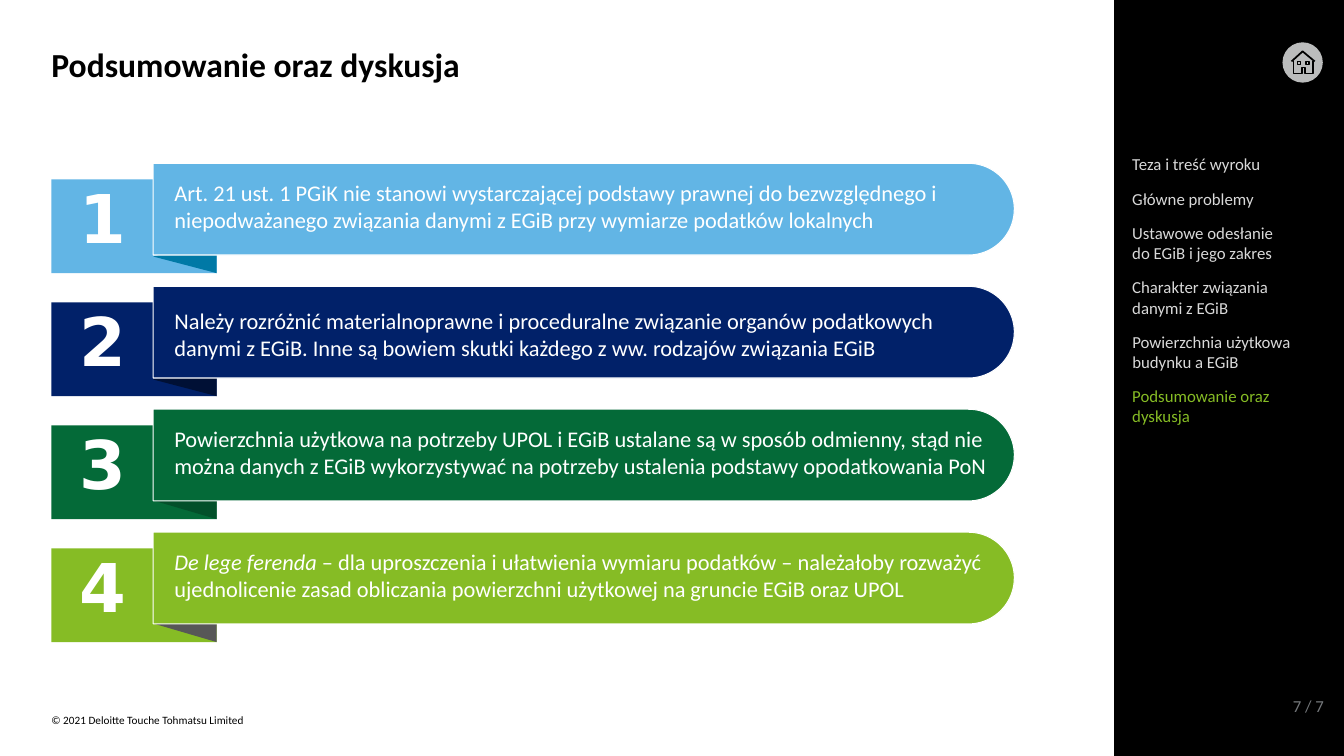
from dataclasses import dataclass
from pptx import Presentation
from pptx.dml.color import RGBColor as Color
from pptx.enum.shapes import MSO_SHAPE as Shape
from pptx.enum.text import MSO_ANCHOR as Anchor, PP_ALIGN as Align
from pptx.util import Inches, Pt


@dataclass(frozen=True)
class Theme:
    font: str = "Calibri"
    number_font: str = "DejaVu Sans"
    black: str = "000000"
    white: str = "FFFFFF"
    menu: str = "D9D9D9"
    accent: str = "86BC25"
    page_number: str = "75787B"
    icon: str = "BBBCBC"
    footer_size: float = 8
    menu_size: float = 12
    body_size: float = 16
    title_size: float = 24
    number_size: float = 48


class SlideBuilder:
    def __init__(self, page, theme):
        self.page = page
        self.theme = theme

    def text(self, left, top, width, height, words, size, color,
             font=None, bold=False, align=Align.LEFT, italic_start=""):
        box = self.page.shapes.add_textbox(
            Inches(left), Inches(top), Inches(width), Inches(height))
        frame = box.text_frame
        frame.word_wrap = True
        frame.vertical_anchor = Anchor.TOP
        frame.margin_left = frame.margin_right = 0
        frame.margin_top = frame.margin_bottom = 0
        para = frame.paragraphs[0]
        para.text = italic_start or words
        if italic_start:
            para.add_run().text = words
        para.alignment = align
        for span in para.runs:
            span.font.name = font or self.theme.font
            span.font.size = Pt(size)
            span.font.bold = bold
            span.font.color.rgb = Color.from_string(color)
        if italic_start:
            para.runs[0].font.italic = True

    def shape(self, kind, left, top, width, height, fill, line=None, turn=0):
        if turn in (90, 270):
            left, top = left + (width - height) / 2, top + (height - width) / 2
            width, height = height, width
        item = self.page.shapes.add_shape(
            kind, Inches(left), Inches(top), Inches(width), Inches(height))
        item.shadow.inherit = False
        item.rotation = turn
        item.fill.solid()
        item.fill.fore_color.rgb = Color.from_string(fill)
        if line:
            item.line.color.rgb = Color.from_string(line)
            item.line.width = Pt(0.75)
        else:
            item.line.fill.background()
        return item

    def outline(self, points, close=False):
        corners = [(Inches(x), Inches(y)) for x, y in points]
        builder = self.page.shapes.build_freeform(*corners[0])
        builder.add_line_segments(corners[1:], close=close)
        stroke = builder.convert_to_shape()
        stroke.shadow.inherit = False
        stroke.fill.background()
        stroke.line.color.rgb = Color.from_string(self.theme.black)
        stroke.line.width = Pt(1.25)

    def home_button(self):
        self.shape(Shape.OVAL, 12.72, 0.42, 0.4, 0.4, self.theme.icon)
        self.outline([(12.81, 0.61), (12.92, 0.51), (13.04, 0.61)])
        self.outline([(12.83, 0.61), (12.83, 0.73), (12.91, 0.73), (12.91, 0.67),
                      (12.94, 0.67), (12.94, 0.73), (13.02, 0.73), (13.02, 0.61)])
        for left in (12.87, 12.95):
            right = left + 0.03
            self.outline([(left, 0.61), (right, 0.61), (right, 0.64), (left, 0.64)],
                         close=True)

    def menu(self, entries):
        top = 1.53
        for words, lines, width, color in entries:
            height = 0.2 * lines
            self.text(11.23, top, width, height, words, self.theme.menu_size, color)
            top += height + 0.14

    def ribbon(self, number, top, fill, fold, fold_height, words,
               text_shift=0, italic_start=""):
        theme = self.theme
        self.shape(Shape.RECTANGLE, 0.51, top, 1.64, 0.93, fill)
        self.shape(Shape.ISOSCELES_TRIANGLE, 1.52, top + 0.93 - fold_height,
                   0.63, fold_height, fold, turn=270)
        bar = self.shape(Shape.ROUND_2_SAME_RECTANGLE, 1.52, top - 0.16,
                         8.54, 0.91, fill, theme.white, 90)
        bar.adjustments[0] = 0.5
        bar.adjustments[1] = 0
        self.text(0.59, top - 0.03, 0.86, 0.81, str(number), theme.number_size,
                  theme.white, theme.number_font, True, Align.CENTER)
        self.text(1.73, top + text_shift, 8.25, 0.54, words, theme.body_size,
                  theme.white, italic_start=italic_start)


def main():
    theme = Theme()
    deck = Presentation()
    deck.slide_width, deck.slide_height = Inches(13.33), Inches(7.5)
    slide = SlideBuilder(deck.slides.add_slide(deck.slide_layouts[6]), theme)

    slide.text(0.51, 7.08, 5.86, 0.13, "© 2021 Deloitte Touche Tohmatsu Limited",
               theme.footer_size, theme.black)
    slide.shape(Shape.RECTANGLE, 11.05, 0, 2.28, 7.5, theme.black)
    slide.text(11.24, 6.9, 1.89, 0.2, "7 / 7", theme.menu_size,
               theme.page_number, align=Align.RIGHT)
    slide.home_button()
    slide.text(0.51, 0.44, 10.02, 0.37, "Podsumowanie oraz dyskusja",
               theme.title_size, theme.black, bold=True)
    slide.menu([
        ("Teza i treść wyroku", 1, 1.54, theme.menu),
        ("Główne problemy", 1, 1.54, theme.menu),
        ("Ustawowe odesłanie do EGiB i jego zakres", 2, 1.54, theme.menu),
        ("Charakter związania danymi z EGiB", 2, 1.73, theme.menu),
        ("Powierzchnia użytkowa budynku a EGiB", 2, 1.81, theme.menu),
        ("Podsumowanie oraz dyskusja", 2, 1.73, theme.accent),
    ])

    conclusions = [
        dict(fill="62B5E5", fold="0079A6", fold_height=0.33,
             words="Art. 21 ust. 1 PGiK nie stanowi wystarczającej podstawy prawnej "
                   "do bezwzględnego i niepodważanego związania danymi z EGiB "
                   "przy wymiarze podatków lokalnych"),
        dict(fill="012169", fold="001035", fold_height=0.33, text_shift=0.05,
             words="Należy rozróżnić materialnoprawne i proceduralne związanie "
                   "organów podatkowych \vdanymi z EGiB. Inne są bowiem skutki "
                   "każdego z ww. rodzajów związania EGiB"),
        dict(fill="046A38", fold="03502A", fold_height=0.37,
             words="Powierzchnia użytkowa na potrzeby UPOL i EGiB ustalane są w sposób "
                   "odmienny, stąd nie można danych z EGiB wykorzystywać na potrzeby "
                   "ustalenia podstawy opodatkowania PoN"),
        dict(fill=theme.accent, fold="575757", fold_height=0.37,
             italic_start="De lege ferenda ",
             words="– dla uproszczenia i ułatwienia wymiaru podatków – należałoby "
                   "rozważyć ujednolicenie zasad obliczania powierzchni użytkowej "
                   "na gruncie EGiB oraz UPOL"),
    ]
    for index, conclusion in enumerate(conclusions):
        slide.ribbon(index + 1, 1.78 + 1.22 * index, **conclusion)

    deck.save("out.pptx")


if __name__ == "__main__":
    main()
